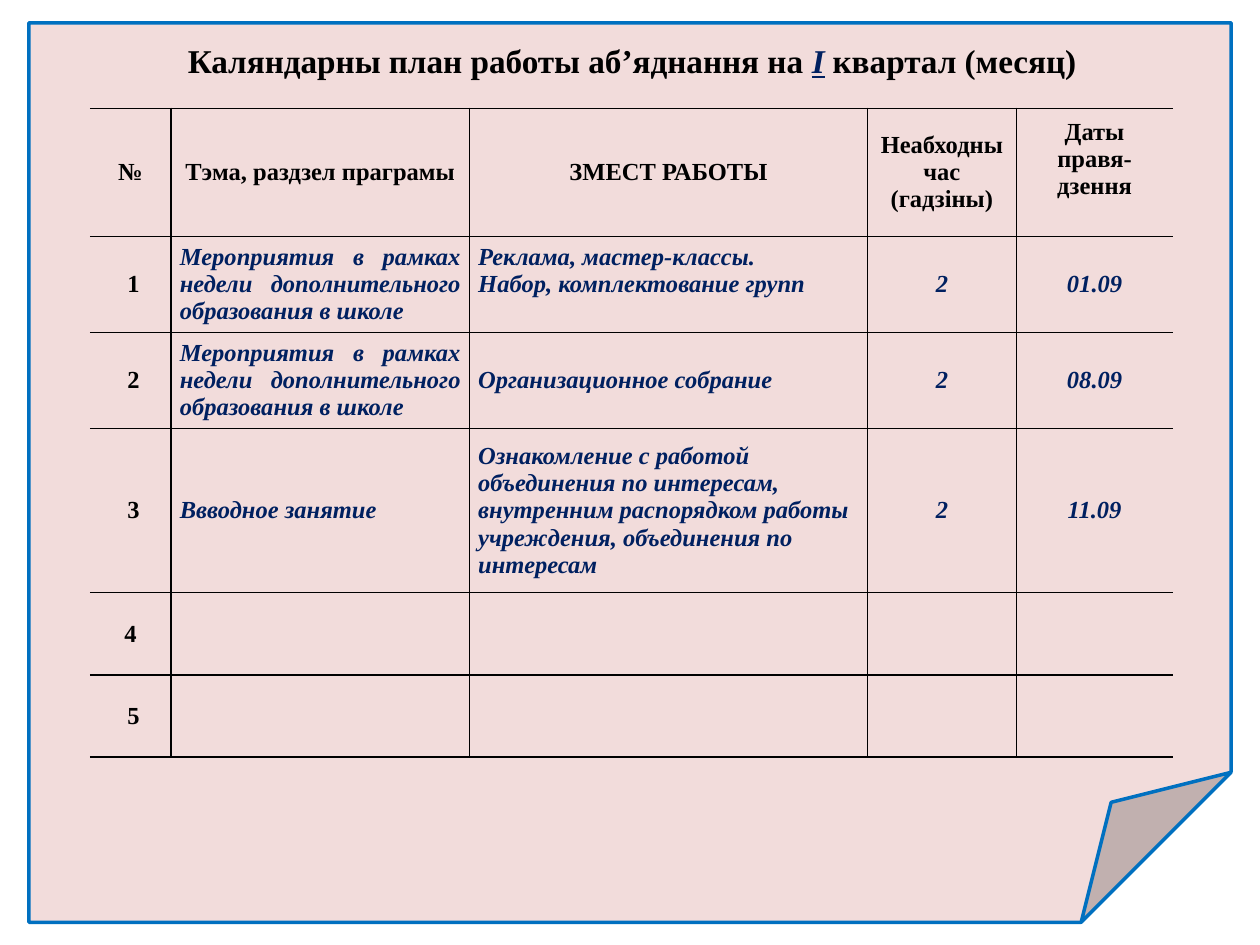
from lxml import etree
from pptx import Presentation
from pptx import util as u
from pptx.dml.color import RGBColor
from pptx.enum import shapes, text
from pptx.oxml.ns import qn

PINK = RGBColor(0xF2, 0xDC, 0xDB)
BLUE = RGBColor(0x00, 0x70, 0xC0)
NAVY = RGBColor(0x00, 0x20, 0x60)
BLACK = RGBColor(0, 0, 0)
FONT = "Times New Roman"
LINE = 15.4  # height of one table text line

C, J, L = text.PP_ALIGN.CENTER, text.PP_ALIGN.JUSTIFY, text.PP_ALIGN.LEFT
HEAD = {"size": u.Pt(14), "name": FONT, "bold": True}
ENTRY = {**HEAD, "italic": True}
TITLE = {"size": u.Pt(19), "name": FONT, "bold": True}

# Content
TITLE_RUNS = [
    ("Каляндарны план работы аб’яднання на ", TITLE, BLACK),
    ("I", {**TITLE, "italic": True, "underline": True}, NAVY),
    (" ", {**TITLE, "size": u.Pt(18)}, BLACK),
    ("квартал (месяц)", TITLE, BLACK),
]
ROWS = [
    ["№", "Тэма, раздзел праграмы", "ЗМЕСТ РАБОТЫ",
     "Неабходны час\n(гадзіны)", "Даты правя-дзення"],
    [" 1", "Мероприятия в рамках недели  дополнительного образования в школе",
     "Реклама, мастер-классы.\nНабор, комплектование групп", "2", "01.09"],
    [" 2", "Мероприятия в рамках недели дополнительного образования в школе",
     "Организационное собрание ", "2", "08.09"],
    [" 3", "Ввводное занятие",
     "Ознакомление с работой объединения по интересам,  внутренним "
     "распорядком работы учреждения, объединения по интересам", "2", "11.09"],
    ["4", "", "", "", ""],
    [" 5", "", "", "", ""],
]
COL_W = [46.5, 170.5, 227.5, 85, 89.5]
ROW_H = [73.2, 54.9, 54.9, 93.7, 47, 47]
RAISED = {(0, 4), (1, 2)}  # cells whose text sits one line higher
LEFT_ALIGNED = {(3, 2)}


def add_run(p, words, fmt, color):
    r = p.add_run()
    r.text = words
    for key, value in fmt.items():
        setattr(r.font, key, value)
    r.font.color.rgb = color


def set_borders(cell, sides):
    """Draw a thin black line on each side marked True, none on the others."""
    tcPr = cell._tc.get_or_add_tcPr()
    for i, (side, shown) in enumerate(sides.items()):
        ln = etree.Element(qn("a:ln" + side), w=str(u.Pt(1)))
        if shown:
            fill = etree.SubElement(ln, qn("a:solidFill"))
            etree.SubElement(fill, qn("a:srgbClr"), val=str(BLACK))
        else:
            etree.SubElement(ln, qn("a:noFill"))
        tcPr.insert(i, ln)


prs = Presentation()
prs.slide_width, prs.slide_height = u.Pt(720), u.Pt(540)
s = prs.slides.add_slide(prs.slide_layouts[6])

# Sheet with a folded corner
sp = s.shapes.add_shape(shapes.MSO_SHAPE.FOLDED_CORNER,
                        u.Pt(16.5), u.Pt(13), u.Pt(687), u.Pt(514))
sp.shadow.inherit = False
sp.fill.solid()
sp.fill.fore_color.rgb = PINK
sp.line.color.rgb = BLUE
sp.line.width = u.Pt(2)

# Title
tf = s.shapes.add_textbox(u.Pt(18.7), u.Pt(19.5), u.Pt(685), u.Pt(30)).text_frame
tf.word_wrap = True
p = tf.paragraphs[0]
p.alignment = C
for words, fmt, color in TITLE_RUNS:
    add_run(p, words, fmt, color)

# Plan table
table = s.shapes.add_table(len(ROWS), len(COL_W), u.Pt(51.3), u.Pt(62),
                           u.Pt(sum(COL_W)), u.Pt(sum(ROW_H))).table
table.first_row = table.horz_banding = False
for col, width in zip(table.columns, COL_W):
    col.width = u.Pt(width)
for row, height in zip(table.rows, ROW_H):
    row.height = u.Pt(height)

last = len(COL_W) - 1
for i, row in enumerate(ROWS):
    for j, words in enumerate(row):
        cell = table.cell(i, j)
        cell.fill.background()
        cell.vertical_anchor = text.MSO_ANCHOR.MIDDLE
        cell.margin_left = cell.margin_right = u.Pt(5)
        cell.margin_top = 0
        cell.margin_bottom = u.Pt(LINE if (i, j) in RAISED else 0)
        set_borders(cell, {"L": j > 0, "R": j < last, "T": True, "B": True})
        if not words:
            continue
        is_head = i == 0 or j == 0
        align = C if is_head or j > 2 else L if (i, j) in LEFT_ALIGNED else J
        for k, line in enumerate(words.split("\n")):
            tf = cell.text_frame
            p = tf.add_paragraph() if k else tf.paragraphs[0]
            p.alignment = align
            add_run(p, line, HEAD if is_head else ENTRY, BLACK if is_head else NAVY)

prs.save("out.pptx")
